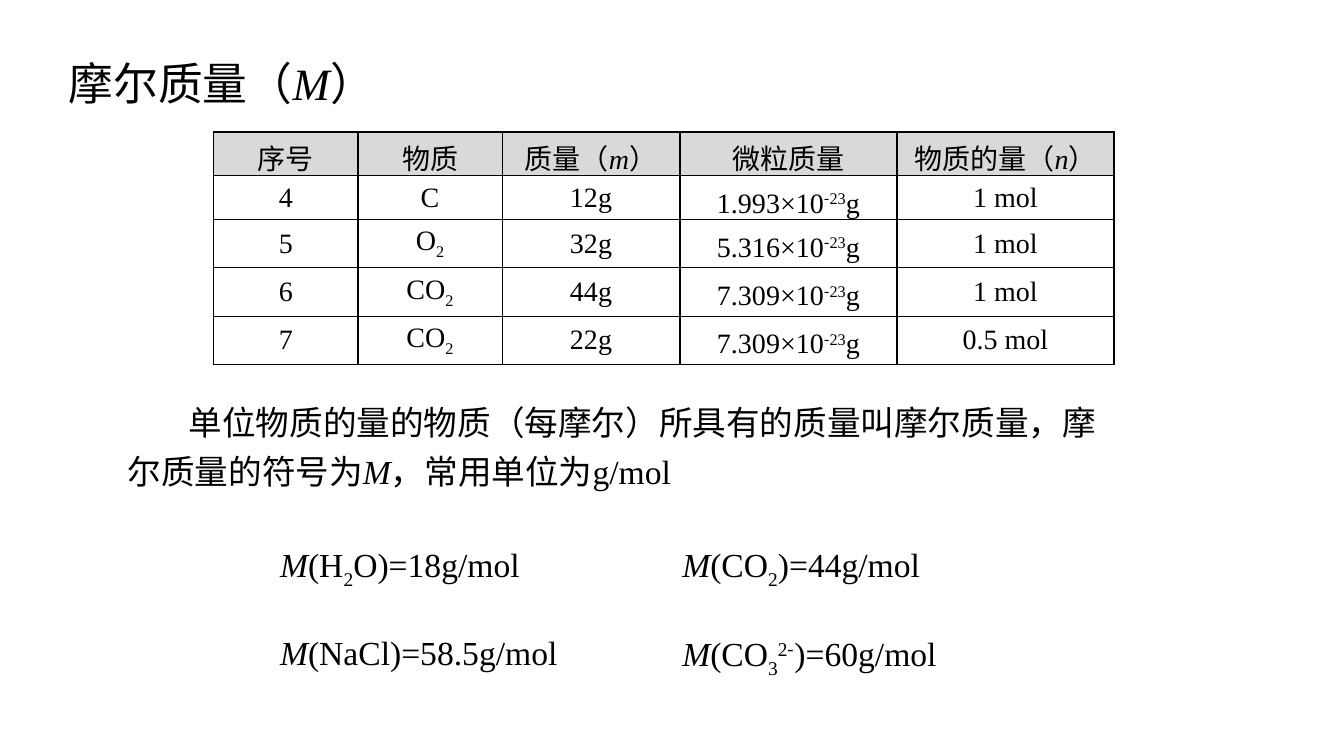
from typing import NamedTuple

import pptx
import pptx.dml.color
import pptx.enum.text
import pptx.oxml
import pptx.oxml.ns
import pptx.util
from lxml import etree

Pt = pptx.util.Pt
ALIGN = pptx.enum.text.PP_ALIGN
ANCHOR = pptx.enum.text.MSO_ANCHOR
COLORS = {"text": "000000", "header": "D9D9D9", "body": "FFFFFF", "border": "000000"}
FONT, MINUS_FONT = "Times New Roman", "Noto Sans CJK SC"


class Piece(NamedTuple):
    text: str
    italic: bool = False
    baseline: int = 0
    font: str = FONT


class TextBox(NamedTuple):
    left: float
    top: float
    width: float
    height: float
    pieces: list[Piece]
    size: float = 24
    spacing: float = 1.2
    indent: float = 0
    anchor: ANCHOR = ANCHOR.TOP


def var(symbol: str) -> Piece:
    return Piece(symbol, italic=True)


def sub(text: str) -> Piece:
    return Piece(text, baseline=-25)


def sup(text: str, font: str = FONT) -> Piece:
    return Piece(text, baseline=30, font=font)


MINUS = sup("-", MINUS_FONT)
M = var("M")


def rgb(name: str) -> pptx.dml.color.RGBColor:
    return pptx.dml.color.RGBColor.from_string(COLORS[name])


def write(p, pieces: list[Piece], size: float) -> None:
    for piece in pieces:
        r = p.add_run()
        r.text = piece.text
        r.font.size = Pt(size)
        r.font.name = piece.font
        r.font.italic = piece.italic
        r.font.color.rgb = rgb("text")
        if piece.baseline:
            r.font._element.set("baseline", str(piece.baseline * 1000))


def add_text(s, box: TextBox) -> None:
    sp = s.shapes.add_textbox(Pt(box.left), Pt(box.top), Pt(box.width), Pt(box.height))
    tf = sp.text_frame
    tf.word_wrap = True
    tf.vertical_anchor = box.anchor
    p = tf.paragraphs[0]
    p.line_spacing = box.spacing
    if box.indent:
        p._p.get_or_add_pPr().set("indent", str(Pt(box.indent)))
    write(p, box.pieces, box.size)


def add_borders(cell) -> None:
    tcPr = cell._tc.get_or_add_tcPr()
    for i, side in enumerate(("lnL", "lnR", "lnT", "lnB")):
        ln = etree.Element(pptx.oxml.ns.qn(f"a:{side}"), w=str(Pt(1)))
        fill = etree.SubElement(ln, pptx.oxml.ns.qn("a:solidFill"))
        etree.SubElement(fill, pptx.oxml.ns.qn("a:srgbClr"), val=COLORS["border"])
        tcPr.insert(i, ln)


def substance_row(number: str, formula: list[Piece], mass: str, particle: str,
                  amount: str) -> list[list[Piece]]:
    return [[Piece(number)], formula, [Piece(mass)],
            [Piece(f"{particle}×10"), MINUS, sup("23"), Piece("g")], [Piece(amount)]]


def add_substances(s, rows: list[list[list[Piece]]]) -> None:
    widths = [103, 103, 127, 155, 155]
    row_height = 29.5
    frame = s.shapes.add_table(len(rows), len(widths), Pt(152.7), Pt(94.3),
                               Pt(sum(widths)), Pt(row_height * len(rows)))
    table = frame.table
    for column, width in zip(table.columns, widths):
        column.width = Pt(width)
    for i, row in enumerate(rows):
        table.rows[i].height = Pt(row_height)
        for j, pieces in enumerate(row):
            cell = table.cell(i, j)
            cell.vertical_anchor = ANCHOR.MIDDLE
            cell.fill.solid()
            cell.fill.fore_color.rgb = rgb("body" if i else "header")
            add_borders(cell)
            p = cell.text_frame.paragraphs[0]
            p.alignment = ALIGN.CENTER
            write(p, pieces, 20)


HEADER = [[Piece("序号")], [Piece("物质")], [Piece("质量（"), var("m"), Piece("）")],
          [Piece("微粒质量")], [Piece("物质的量（"), var("n"), Piece("）")]]
CO2 = [Piece("CO"), sub("2")]
SUBSTANCES = [
    substance_row("4", [Piece("C")], "12g", "1.993", "1 mol"),
    substance_row("5", [Piece("O"), sub("2")], "32g", "5.316", "1 mol"),
    substance_row("6", CO2, "44g", "7.309", "1 mol"),
    substance_row("7", CO2, "22g", "7.309", "0.5 mol"),
]
TITLE = TextBox(41.8, 28.8, 828, 65.5, [Piece("摩尔质量（"), M, Piece("）")],
                size=32, spacing=0.9, anchor=ANCHOR.MIDDLE)
DEFINITION = TextBox(
    84.2, 277.9, 710.6, 73.4,
    [Piece("单位物质的量的物质（每摩尔）所具有的质量叫摩尔质量，摩尔质量的符号为"),
     M, Piece("，常用单位为g/mol")], indent=43.5)
EXAMPLES = [
    [M, Piece("(H"), sub("2"), Piece("O)=18g/mol")],
    [M, Piece("(CO"), sub("2"), Piece(")=44g/mol")],
    [M, Piece("(NaCl)=58.5g/mol")],
    [M, Piece("(CO"), sub("3"), sup("2"), MINUS, Piece(")=60g/mol")],
]


def main() -> None:
    prs = pptx.Presentation()
    prs.slide_width, prs.slide_height = Pt(960), Pt(540)
    s = prs.slides.add_slide(prs.slide_layouts[6])
    add_text(s, TITLE)
    add_substances(s, [HEADER, *SUBSTANCES])
    add_text(s, DEFINITION)
    for i, pieces in enumerate(EXAMPLES):
        row, column = divmod(i, 2)
        add_text(s, TextBox(193 + 287.3 * column, 378.7 + 63.4 * row, 213.8, 38.9, pieces))
    prs.save("out.pptx")


if __name__ == "__main__":
    main()
